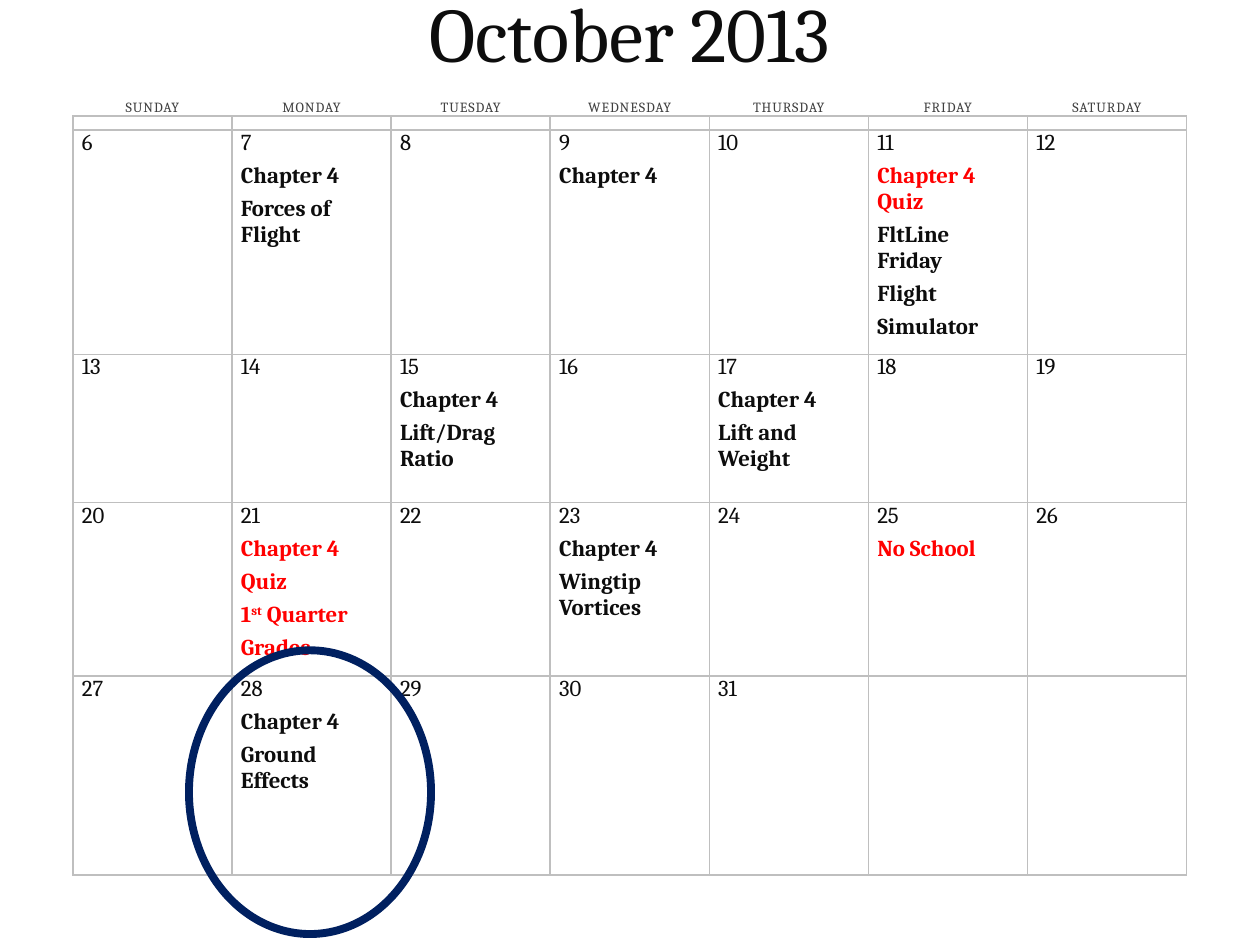
from lxml.etree import SubElement
from pptx import Presentation
from pptx.dml.color import RGBColor
from pptx.enum.shapes import MSO_SHAPE
from pptx.enum.text import MSO_ANCHOR, MSO_AUTO_SIZE, PP_ALIGN
from pptx.oxml.ns import qn
from pptx.util import Cm, Pt

COLORS = {"ink": "0D0D0D", "heading": "404040", "alert": "FF0000",
          "grid": "BFBFBF", "ring": "002060"}
FONT = "Cambria"
WEEKDAYS = ["SUNDAY", "MONDAY", "TUESDAY", "WEDNESDAY",
            "THURSDAY", "FRIDAY", "SATURDAY"]
FIRST_DAY, LAST_DAY = 6, 31
# Heading, spacer, then a day row and a spacer row for each week
ROW_HEIGHTS = [0.64, 0.28, 4.11, 0.28, 2.41, 0.58, 3.18, 0.3, 2.41, 1.6]

# Lines under each date; "!" marks an alert, "^" encloses a superscript
EVENTS = {
    7: ["Chapter 4", "Forces of Flight"],
    9: ["Chapter 4"],
    11: ["!Chapter 4 Quiz", "FltLine Friday", "Flight", "Simulator"],
    15: ["Chapter 4", "Lift/Drag Ratio"],
    17: ["Chapter 4", "Lift and Weight"],
    21: ["!Chapter 4", "!Quiz", "!1^st^ Quarter", "!Grades"],
    23: ["Chapter 4", "Wingtip Vortices"],
    25: ["!No School"],
    28: ["Chapter 4", "Ground Effects"],
}


def color(name):
    return RGBColor.from_string(COLORS[name])


def format_runs(paragraph, size, color_name, bold=False):
    for run in paragraph.runs:
        run.font.name = FONT
        run.font.size = Pt(size)
        run.font.bold = bold
        run.font.color.rgb = color(color_name)


def set_borders(cell, sides):
    properties = cell._tc.get_or_add_tcPr()
    for index, side in enumerate("LRTB"):
        line = properties.makeelement(qn(f"a:ln{side}"), {"w": str(Pt(1))})
        if side in sides:
            fill = SubElement(line, qn("a:solidFill"))
            SubElement(fill, qn("a:srgbClr"), val=COLORS["grid"])
        else:
            SubElement(line, qn("a:noFill"))
        properties.insert(index, line)


def fill_heading(cell, weekday):
    cell.vertical_anchor = MSO_ANCHOR.BOTTOM
    paragraph = cell.text_frame.paragraphs[0]
    paragraph.text = weekday
    paragraph.alignment = PP_ALIGN.CENTER
    format_runs(paragraph, 8, "heading")
    paragraph.runs[0].font._element.set("spc", "50")


def fill_day(cell, day):
    paragraph = cell.text_frame.paragraphs[0]
    paragraph.text = str(day)
    format_runs(paragraph, 13, "ink")
    for event in EVENTS.get(day, []):
        paragraph = cell.text_frame.add_paragraph()
        for index, part in enumerate(event.lstrip("!").split("^")):
            run = paragraph.add_run()
            run.text = part
            if index % 2:
                run.font._element.set("baseline", "30000")
        format_runs(paragraph, 13, "alert" if event.startswith("!") else "ink", True)


def shrink_empty(cell):
    """Keep an empty cell from stretching its narrow row."""
    paragraph = cell.text_frame.paragraphs[0]
    SubElement(paragraph._p, qn("a:endParaRPr"), sz="400")


def add_calendar(slide, left, top, width):
    columns = len(WEEKDAYS)
    frame = slide.shapes.add_table(len(ROW_HEIGHTS), columns, Cm(left), Cm(top),
                                   Cm(width), Cm(sum(ROW_HEIGHTS)))
    table = frame.table
    table.first_row = table.horz_banding = False
    for column in table.columns:
        column.width = Cm(width / columns)

    for row_index, height in enumerate(ROW_HEIGHTS):
        table.rows[row_index].height = Cm(height)
        is_day_row = row_index >= 2 and row_index % 2 == 0
        for column_index, weekday in enumerate(WEEKDAYS):
            cell = table.cell(row_index, column_index)
            cell.fill.background()
            cell.margin_left = cell.margin_right = Cm(0.18)
            cell.margin_top = cell.margin_bottom = 0
            day = FIRST_DAY + (row_index // 2 - 1) * columns + column_index
            if row_index == 0:
                fill_heading(cell, weekday)
                sides = "B"
            elif is_day_row:
                if day <= LAST_DAY:
                    fill_day(cell, day)
                sides = "LRT"
            else:
                shrink_empty(cell)
                sides = "LRTB" if row_index == 1 else "LRB"
            set_borders(cell, sides)
            for paragraph in cell.text_frame.paragraphs:
                paragraph.space_before = paragraph.space_after = Pt(2)


def add_title(slide, left, top, width, height):
    text_box = slide.shapes.add_textbox(Cm(left), Cm(top), Cm(width), Cm(height))
    text_frame = text_box.text_frame
    text_frame.text = "October 2013"
    text_frame.word_wrap = False
    text_frame.auto_size = MSO_AUTO_SIZE.SHAPE_TO_FIT_TEXT
    text_frame.vertical_anchor = MSO_ANCHOR.MIDDLE
    paragraph = text_frame.paragraphs[0]
    paragraph.alignment = PP_ALIGN.CENTER
    format_runs(paragraph, 44, "ink")


def add_ring(slide, left, top, width, height):
    ring = slide.shapes.add_shape(MSO_SHAPE.OVAL, Cm(left), Cm(top),
                                  Cm(width), Cm(height))
    ring.shadow.inherit = False
    ring.fill.background()
    ring.line.color.rgb = color("ring")
    ring.line.width = Pt(4.5)


def main():
    presentation = Presentation()
    presentation.slide_width, presentation.slide_height = Cm(25.4), Cm(19.05)
    slide = presentation.slides.add_slide(presentation.slide_layouts[6])
    add_calendar(slide, 1.47, 1.7, 22.45)
    add_title(slide, 0, 0, 25.4, 1.27)
    # Ring around the 28th
    add_ring(slide, 3.81, 13.11, 4.88, 5.72)
    presentation.save("out.pptx")


if __name__ == "__main__":
    main()
